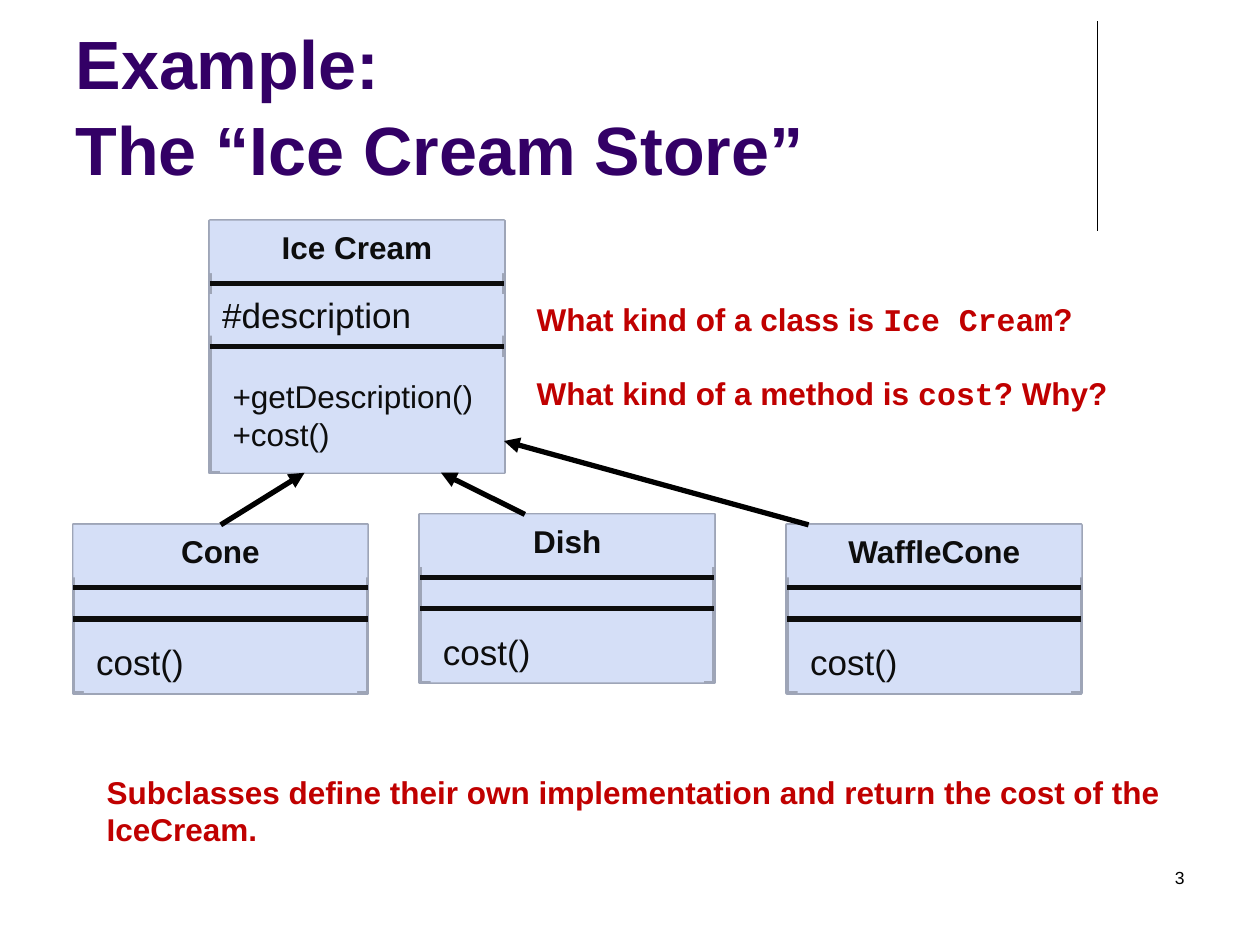
"""Build a slide with the class diagram of an ice cream store."""
from lxml import etree
from pptx import Presentation
from pptx.dml.color import RGBColor
from pptx.enum.shapes import MSO_CONNECTOR, MSO_SHAPE
from pptx.enum.text import MSO_ANCHOR, PP_ALIGN
from pptx.oxml.ns import qn
from pptx.util import Cm, Pt

STRAIGHT = MSO_CONNECTOR.STRAIGHT
RECTANGLE = MSO_SHAPE.RECTANGLE
MIDDLE, BOTTOM = MSO_ANCHOR.MIDDLE, MSO_ANCHOR.BOTTOM
LEFT, CENTER, RIGHT = PP_ALIGN.LEFT, PP_ALIGN.CENTER, PP_ALIGN.RIGHT

BLACK = RGBColor(0x00, 0x00, 0x00)
INK = RGBColor(0x0D, 0x0D, 0x0D)
PURPLE = RGBColor(0x33, 0x00, 0x66)
RED = RGBColor(0xC0, 0x00, 0x00)
PALE_BLUE = RGBColor(0xD5, 0xDF, 0xF7)
BORDER = RGBColor(0x9E, 0xA5, 0xB7)

SANS, MONO = "Arial", "Courier New"
CLASS_WIDTH = 5.93
INDENT = 0.21


def add_run(paragraph, text, size, color, bold=False, font=SANS):
    """Append one formatted run to a paragraph."""
    run = paragraph.add_run()
    run.text = text
    run.font.name = font
    run.font.size = Pt(size)
    run.font.bold = bold
    run.font.color.rgb = color


def add_line(slide, start, end, width, color=BLACK, arrow=False):
    """Draw a straight line, with an arrowhead at its end if wanted."""
    line = slide.shapes.add_connector(
        STRAIGHT, *(Cm(value) for value in (*start, *end)))
    line.line.width = Pt(width)
    line.line.color.rgb = color
    if arrow:
        etree.SubElement(line.line._get_or_add_ln(), qn("a:tailEnd"), type="triangle")
    etree.SubElement(line._element.spPr, qn("a:effectLst"))


def add_panel(slide, left, top, width, height):
    """Draw a pale rectangle without a border."""
    panel = slide.shapes.add_shape(RECTANGLE, Cm(left), Cm(top), Cm(width), Cm(height))
    panel.shadow.inherit = False
    panel.fill.solid()
    panel.fill.fore_color.rgb = PALE_BLUE
    panel.line.fill.background()
    return panel


def add_compartment(slide, box, rows, size, align=LEFT, bold=False):
    """Add one text compartment of a class, a paragraph for each row."""
    frame = add_panel(slide, *box).text_frame
    frame.word_wrap = True
    frame.vertical_anchor = MIDDLE
    for index, row in enumerate(rows):
        paragraph = frame.add_paragraph() if index else frame.paragraphs[0]
        paragraph.alignment = align
        add_run(paragraph, row, size, INK, bold)


def add_class_frame(slide, name, left, top, height, rules):
    """Draw the outline, dividing rules and name of a class."""
    outline = add_panel(slide, left, top, CLASS_WIDTH, height)
    outline.line.color.rgb = BORDER
    outline.line.width = Pt(2)
    for offset in rules:
        add_line(slide, (left, top + offset), (left + CLASS_WIDTH, top + offset), 3, INK)
    add_compartment(slide, (left, top, CLASS_WIDTH, 1.06), [name], 18, CENTER, True)


def add_base_class(slide, left, top):
    """Add the Ice Cream class with its field and methods."""
    add_class_frame(slide, "Ice Cream", left, top, 5.08, (1.27, 2.54))
    add_compartment(slide, (left, top + 1.48, CLASS_WIDTH, 0.84), ["#description"], 20)
    methods_box = (left + INDENT, top + 2.75, CLASS_WIDTH - INDENT, 2.33)
    add_compartment(slide, methods_box, ["+getDescription()", "+cost()"], 18)


def add_subclass(slide, name, left, top):
    """Add a subclass that overrides cost()."""
    add_class_frame(slide, name, left, top, 3.39, (1.27, 1.9))
    cost_box = (left + INDENT, top + 2.12, CLASS_WIDTH - 2 * INDENT, 1.27)
    add_compartment(slide, cost_box, ["cost()"], 20)


def add_text_box(slide, left, top, width, height, wrap=True):
    """Add an empty text box and return its text frame."""
    box = slide.shapes.add_textbox(Cm(left), Cm(top), Cm(width), Cm(height))
    box.text_frame.word_wrap = wrap
    return box.text_frame


def set_title(slide, lines):
    """Place and format the title placeholder."""
    title = slide.shapes.title
    title.left, title.top, title.width, title.height = Cm(1.27), Cm(0.33), Cm(20.96), Cm(3.61)
    title.text_frame.vertical_anchor = BOTTOM
    paragraph = title.text_frame.paragraphs[0]
    paragraph.alignment = LEFT
    paragraph.line_spacing = 1.05
    for index, line in enumerate(lines):
        if index:
            paragraph.add_line_break()
        add_run(paragraph, line, 39, PURPLE, True)


def add_questions(slide):
    """Add the two questions, with code words in a monospaced font."""
    frame = add_text_box(slide, 10.57, 5.92, 12.12, 2.57, wrap=False)
    questions = [
        ("What kind of a class is ", "Ice Cream", "?"),
        ("What kind of a method is ", "cost", "? Why?"),
    ]
    for index, parts in enumerate(questions):
        paragraph = frame.add_paragraph() if index else frame.paragraphs[0]
        if index:
            paragraph.space_before = Pt(21)
        for part, font in zip(parts, (SANS, MONO, SANS)):
            add_run(paragraph, part, 18, RED, True, font)


def main():
    """Build and save the slide."""
    deck = Presentation()
    deck.slide_width, deck.slide_height = Cm(25.4), Cm(19.05)
    slide = deck.slides.add_slide(deck.slide_layouts[5])

    add_line(slide, (22.12, 0.43), (22.12, 4.65), 0.75)
    set_title(slide, ["Example:", "The “Ice Cream Store”"])

    page_number = add_text_box(slide, 18.2, 17.36, 5.93, 1.27).paragraphs[0]
    page_number.alignment = RIGHT
    add_run(page_number, "3", 10, BLACK)

    add_base_class(slide, 4.23, 4.45)
    subclasses = [
        ("Cone", 1.48, 10.58, (4.45, 10.58), (6.14, 9.53)),
        ("Dish", 8.47, 10.37, (10.58, 10.37), (8.89, 9.53)),
        ("WaffleCone", 15.87, 10.58, (16.3, 10.58), (10.16, 8.89)),
    ]
    for name, left, top, start, end in subclasses:
        add_subclass(slide, name, left, top)
        add_line(slide, start, end, 3, arrow=True)

    add_questions(slide)
    summary = add_text_box(slide, 1.9, 15.45, 22.23, 2.31).paragraphs[0]
    add_run(summary, "Subclasses define their own implementation and return "
                     "the cost of the IceCream.", 18, RED, True)

    deck.save("out.pptx")


if __name__ == "__main__":
    main()
